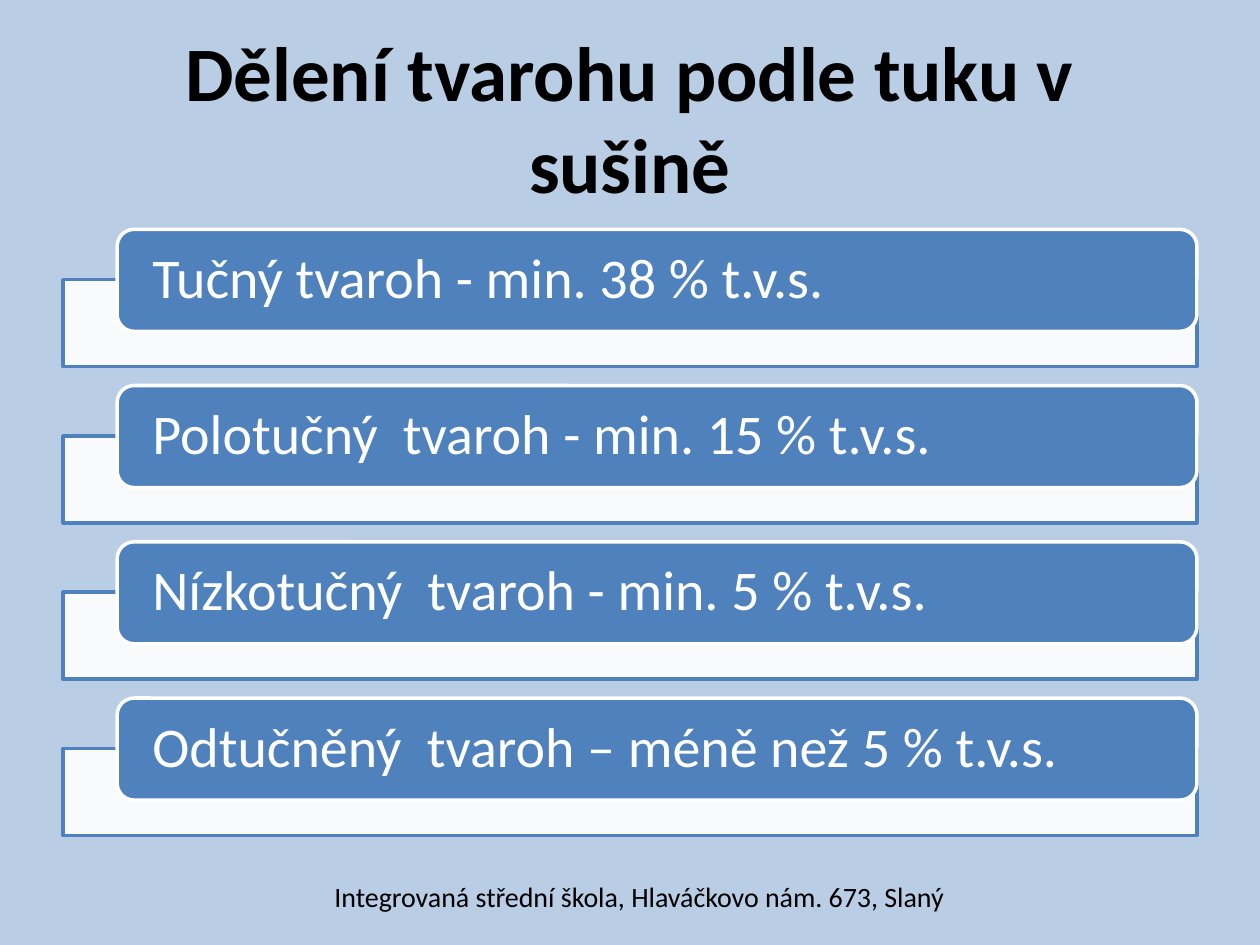
from lxml import etree
from pptx import Presentation
from pptx.dml.color import RGBColor
from pptx.enum.shapes import MSO_SHAPE
from pptx.enum.text import MSO_ANCHOR, PP_ALIGN
from pptx.oxml.ns import qn
from pptx.util import Inches, Pt

RECTANGLE, ROUNDED = MSO_SHAPE.RECTANGLE, MSO_SHAPE.ROUNDED_RECTANGLE
TOP, MIDDLE = MSO_ANCHOR.TOP, MSO_ANCHOR.MIDDLE
LEFT, CENTER = PP_ALIGN.LEFT, PP_ALIGN.CENTER

HEADING = "Dělení tvarohu podle tuku v sušině"
CURD_TYPES = [
    "Tučný tvaroh - min. 38 % t.v.s.",
    "Polotučný  tvaroh - min. 15 % t.v.s.",
    "Nízkotučný  tvaroh - min. 5 % t.v.s.",
    "Odtučněný  tvaroh – méně než 5 % t.v.s.",
]
SCHOOL = "Integrovaná střední škola, Hlaváčkovo nám. 673, Slaný"

FONT = "Calibri"
BACKGROUND, BLUE, WHITE, BLACK = "B9CDE5", "4F81BD", "FFFFFF", "000000"
WIDTH, HEIGHT = 10, 7.5
MARGIN = 0.05 * WIDTH
RIGHT = WIDTH - MARGIN
FIRST_ROW, ROW_STEP = 1.82, 1.24
LABEL_LEFT, LABEL_HEIGHT = 0.93, 0.81
TRAY_OFFSET, TRAY_HEIGHT = 0.4, 0.69


def color(hex_code):
    return RGBColor.from_string(hex_code)


def box(*lengths):
    return [Inches(length) for length in lengths]


def write(shape, text, size, ink, align, anchor=MIDDLE, bold=False):
    frame = shape.text_frame
    frame.text = text
    frame.word_wrap = True
    frame.vertical_anchor = anchor
    paragraph = frame.paragraphs[0]
    paragraph.alignment = align
    font = paragraph.font
    font.name, font.size, font.bold = FONT, Pt(size), bold
    font.color.rgb = color(ink)
    return frame


def panel(slide, preset, bounds, fill, line):
    shape = slide.shapes.add_shape(preset, *box(*bounds))
    shape.shadow.inherit = False
    shape.fill.solid()
    shape.fill.fore_color.rgb = color(fill)
    shape.line.color.rgb = color(line)
    shape.line.width = Pt(2)
    return shape


def add_curd_row(slide, text, top):
    tray = panel(slide, RECTANGLE,
                 (MARGIN, top + TRAY_OFFSET, RIGHT - MARGIN, TRAY_HEIGHT), WHITE, BLUE)
    tint = tray.fill._xPr.find(qn("a:solidFill"))[0]
    etree.SubElement(tint, qn("a:alpha"), val="90000")

    label = panel(slide, ROUNDED,
                  (LABEL_LEFT, top, RIGHT - LABEL_LEFT, LABEL_HEIGHT), BLUE, WHITE)
    frame = write(label, text, 32, WHITE, LEFT)
    frame.margin_left = frame.margin_right = Inches(0.24)
    frame.margin_top = frame.margin_bottom = 0
    frame.paragraphs[0].line_spacing = 0.9


def main():
    deck = Presentation()
    deck.slide_width, deck.slide_height = box(WIDTH, HEIGHT)
    slide = deck.slides.add_slide(deck.slide_layouts[5])
    slide.background.fill.solid()
    slide.background.fill.fore_color.rgb = color(BACKGROUND)

    title = slide.shapes.title
    title.left, title.top, title.width, title.height = box(MARGIN, 0.3, RIGHT - MARGIN, 1.25)
    write(title, HEADING, 44, BLACK, CENTER, bold=True)

    for row, text in enumerate(CURD_TYPES):
        add_curd_row(slide, text, FIRST_ROW + row * ROW_STEP)

    footer = slide.shapes.add_textbox(*box(2.24, 6.98, 5.67, 0.52))
    write(footer, SCHOOL, 16, BLACK, CENTER, TOP).margin_top = 0

    deck.save("out.pptx")


if __name__ == "__main__":
    main()
